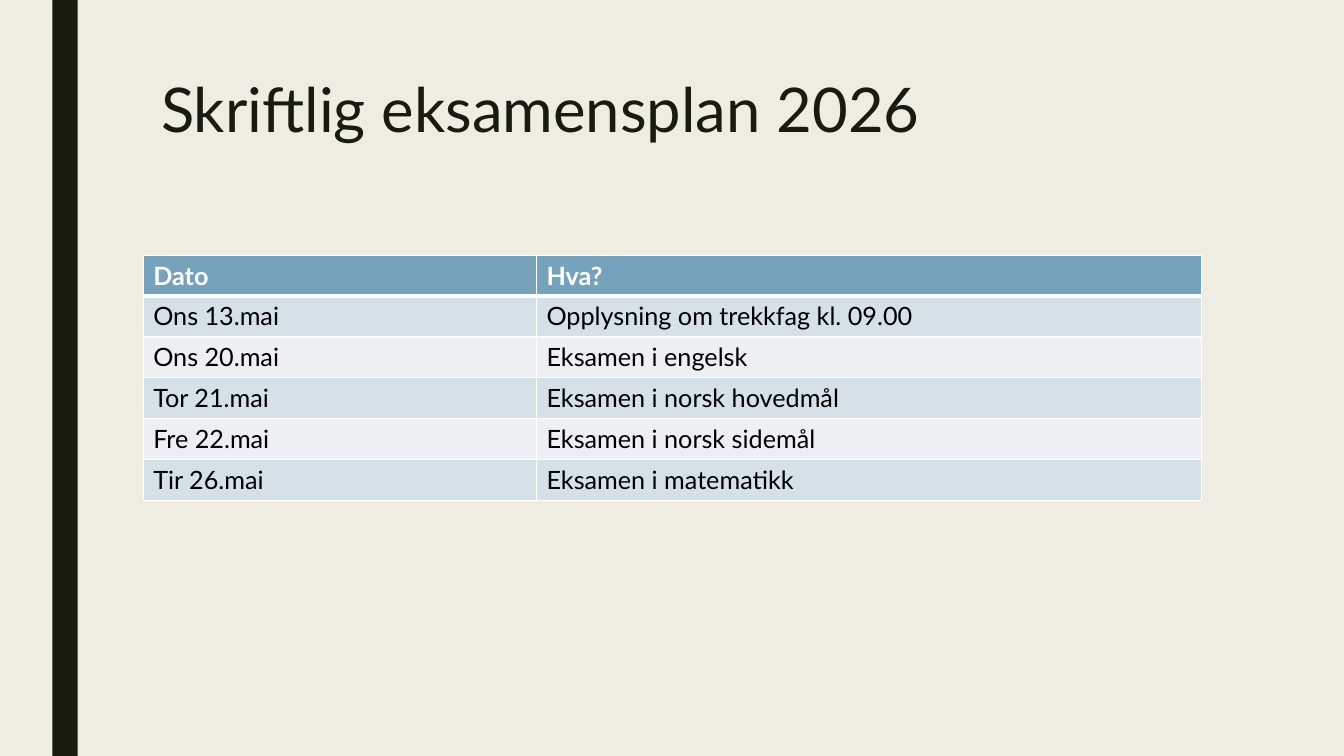
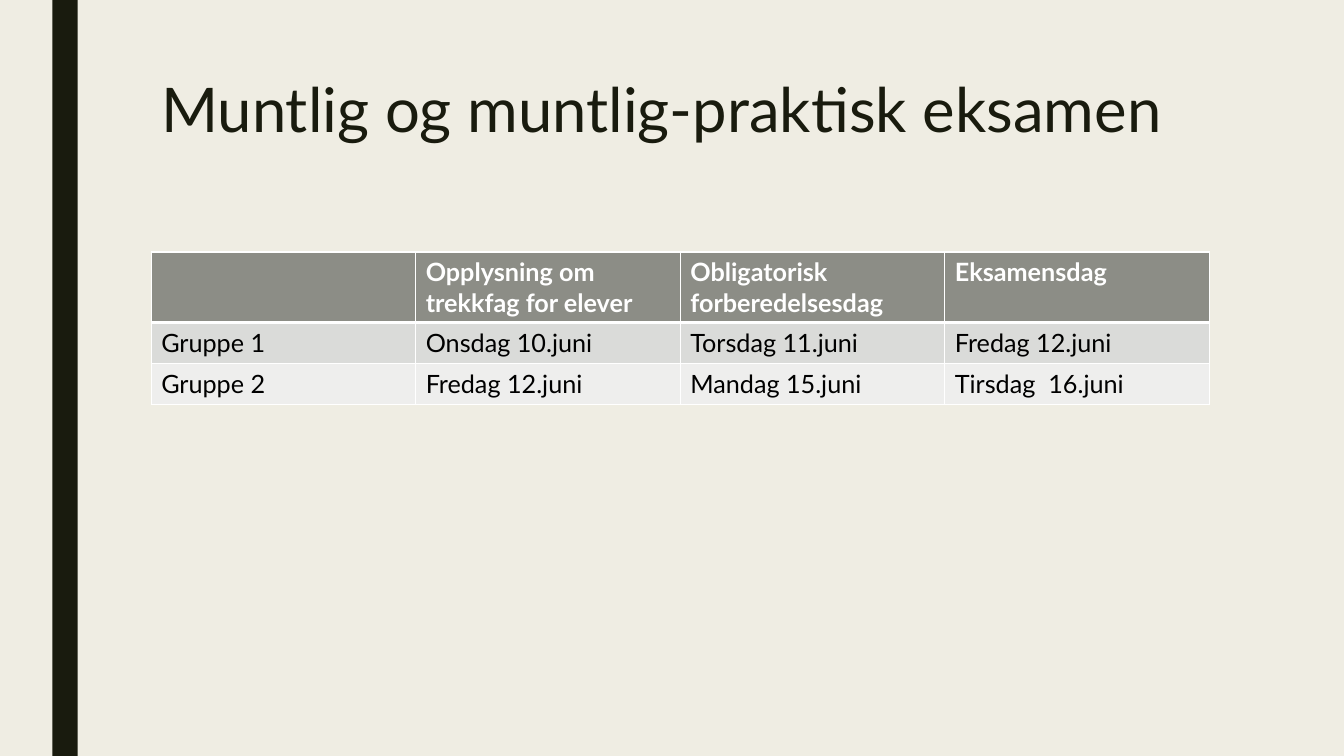
from dataclasses import dataclass

from lxml import etree
from pptx import Presentation
from pptx.dml.color import RGBColor
from pptx.enum.shapes import MSO_SHAPE
from pptx.oxml.ns import qn
from pptx.util import Cm, Pt

RECTANGLE = MSO_SHAPE.RECTANGLE
BLANK_LAYOUT = 6


@dataclass(frozen=True)
class Theme:
    font: str = "Lato"
    background: str = "EFEDE3"
    dark: str = "191B0E"
    white: str = "FFFFFF"
    black: str = "000000"
    title_size: int = 44
    table_size: int = 18
    thin_border: int = 1
    thick_border: int = 3


theme = Theme()

# Slide contents; table bands alternate below the header
slides = [
    {
        "title": "Skriftlig eksamensplan 2026",
        "left": 3.61,
        "top": 6.43,
        "column_widths": [9.91, 16.76],
        "header_height": 1.03,
        "header_fill": "77A2BB",
        "bands": ["D6E0E7", "ECF0F3"],
        "rows": [
            ["Dato", "Hva?"],
            ["Ons 13.mai", "Opplysning om trekkfag kl. 09.00"],
            ["Ons 20.mai", "Eksamen i engelsk"],
            ["Tor 21.mai", "Eksamen i norsk hovedmål"],
            ["Fre 22.mai", "Eksamen i norsk sidemål"],
            ["Tir 26.mai", "Eksamen i matematikk"],
        ],
    },
    {
        "title": "Muntlig og muntlig-praktisk eksamen",
        "left": 3.81,
        "top": 6.35,
        "column_widths": [26.67 / 4] * 4,
        "header_height": 1.77,
        "header_fill": "8C8D86",
        "bands": ["DADBD9", "EEEEED"],
        "rows": [
            ["", "Opplysning om trekkfag for elever",
             "Obligatorisk forberedelsesdag", "Eksamensdag"],
            ["Gruppe 1", "Onsdag 10.juni", "Torsdag 11.juni", "Fredag 12.juni"],
            ["Gruppe 2", "Fredag 12.juni", "Mandag 15.juni", "Tirsdag  16.juni"],
        ],
    },
]
ROW_HEIGHT = 1.03


def write_text(text_frame, text, *, size, color, bold=False, line_spacing=None):
    paragraph = text_frame.paragraphs[0]
    paragraph.text = text
    paragraph.line_spacing = line_spacing
    paragraph.font.name = theme.font
    paragraph.font.size = Pt(size)
    paragraph.font.bold = bold
    paragraph.font.color.rgb = RGBColor.from_string(color)


def add_border(cell, side, width):
    properties = cell._tc.get_or_add_tcPr()
    line = etree.SubElement(properties, qn(f"a:ln{side}"), w=str(Pt(width)))
    fill = etree.SubElement(line, qn("a:solidFill"))
    etree.SubElement(fill, qn("a:srgbClr"), val=theme.white)


presentation = Presentation()
presentation.slide_width = Cm(33.87)
presentation.slide_height = Cm(19.05)

# Shared background
background_fill = presentation.slide_master.background.fill
background_fill.solid()
background_fill.fore_color.rgb = RGBColor.from_string(theme.background)

for content in slides:
    slide = presentation.slides.add_slide(presentation.slide_layouts[BLANK_LAYOUT])

    # Vertical band
    band = slide.shapes.add_shape(
        RECTANGLE, Cm(1.32), Cm(0), Cm(0.64), presentation.slide_height)
    band.shadow.inherit = False
    band.fill.solid()
    band.fill.fore_color.rgb = RGBColor.from_string(theme.dark)
    band.line.fill.background()

    # Title
    title = slide.shapes.add_textbox(Cm(3.81), Cm(1.9), Cm(26.67), Cm(4.12))
    title.text_frame.word_wrap = True
    write_text(title.text_frame, content["title"], size=theme.title_size,
               color=theme.dark, line_spacing=0.89)

    # Table
    rows, widths = content["rows"], content["column_widths"]
    heights = [content["header_height"]] + [ROW_HEIGHT] * (len(rows) - 1)
    table = slide.shapes.add_table(
        len(rows), len(widths), Cm(content["left"]), Cm(content["top"]),
        Cm(sum(widths)), Cm(sum(heights))).table
    for column, width in zip(table.columns, widths):
        column.width = Cm(width)

    for row_index, row_texts in enumerate(rows):
        table.rows[row_index].height = Cm(heights[row_index])
        is_header = row_index == 0
        fill_color = (content["header_fill"] if is_header
                      else content["bands"][(row_index - 1) % 2])
        top_border = theme.thick_border if row_index == 1 else theme.thin_border
        bottom_border = theme.thick_border if is_header else theme.thin_border

        for column_index, text in enumerate(row_texts):
            cell = table.cell(row_index, column_index)
            for side, width in (("L", theme.thin_border), ("R", theme.thin_border),
                                ("T", top_border), ("B", bottom_border)):
                add_border(cell, side, width)
            cell.fill.solid()
            cell.fill.fore_color.rgb = RGBColor.from_string(fill_color)
            write_text(cell.text_frame, text, size=theme.table_size, bold=is_header,
                       color=theme.white if is_header else theme.black)

presentation.save("out.pptx")
